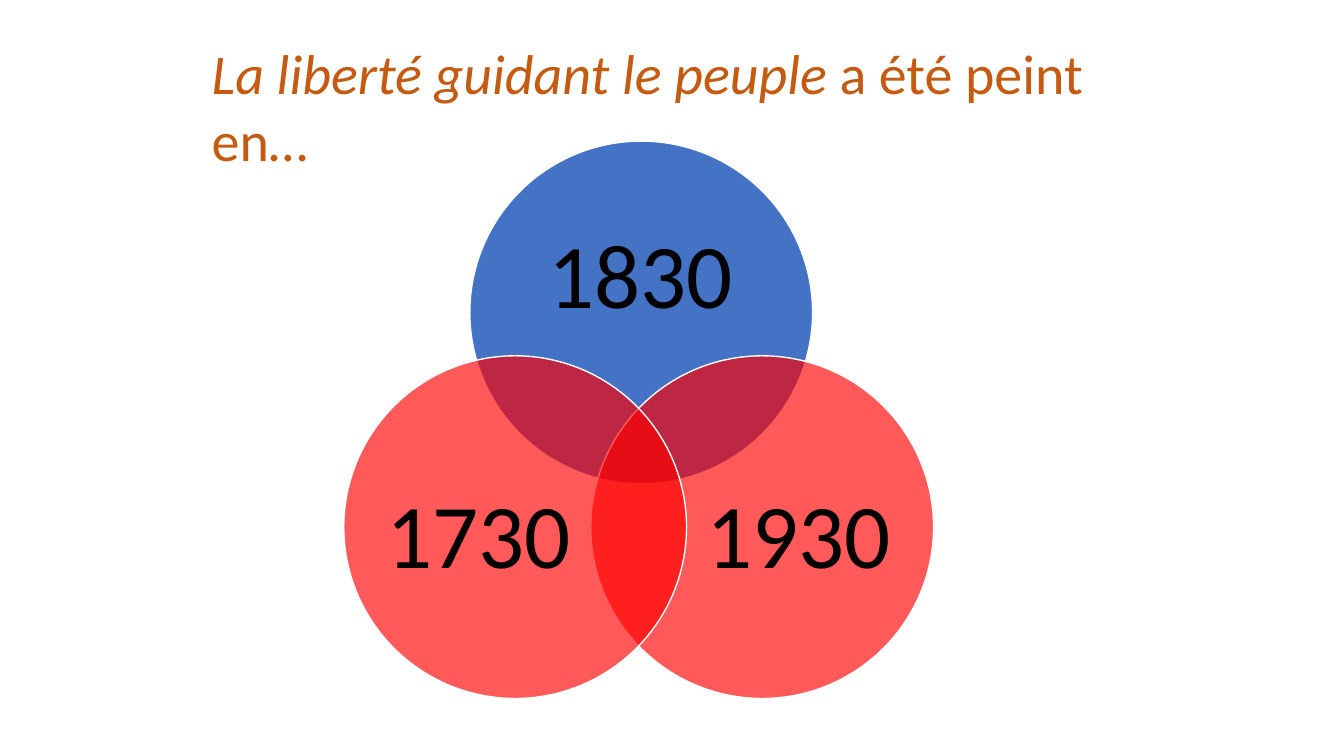
from dataclasses import dataclass

from lxml.etree import SubElement
from pptx import Presentation
from pptx.dml.color import RGBColor
from pptx.enum.shapes import MSO_SHAPE
from pptx.enum.text import MSO_ANCHOR, MSO_AUTO_SIZE, PP_ALIGN
from pptx.oxml.ns import qn
from pptx.util import Emu, Pt

EMU_PER_PX = 9144
CIRCLE_SIZE = 340


@dataclass(frozen=True)
class Theme:
    font: str = "Calibri"
    question: RGBColor = RGBColor(0xC5, 0x5A, 0x11)
    year: RGBColor = RGBColor(0x00, 0x00, 0x00)
    right_answer: RGBColor = RGBColor(0x44, 0x72, 0xC4)
    wrong_answer: RGBColor = RGBColor(0xFF, 0x00, 0x00)
    outline: RGBColor = RGBColor(0xFF, 0xFF, 0xFF)
    question_size: Pt = Pt(40)
    year_size: Pt = Pt(65)
    outline_width: Pt = Pt(1)


THEME = Theme()

ANSWERS = [
    ("1830", (466, 140), (511, 200, 249, 153), THEME.right_answer, 100),
    ("1930", (586, 353), (690, 441, 204, 187), THEME.wrong_answer, 65),
    ("1730", (341, 353), (373, 441, 204, 187), THEME.wrong_answer, 65),
]


def px(*lengths):
    return [Emu(length * EMU_PER_PX) for length in lengths]


def apply_format(target, values):
    for attribute, value in values.items():
        setattr(target, attribute, value)


def add_run(paragraph, text, size, color, italic=False):
    run = paragraph.add_run()
    run.text = text
    apply_format(run.font, {"name": THEME.font, "size": size, "italic": italic})
    run.font.color.rgb = color


def write_question(slide):
    question = slide.shapes.title
    left, top, width, height = px(200, 33, 933, 145)
    apply_format(question, {"left": left, "top": top, "width": width, "height": height})
    apply_format(question.text_frame, {
        "word_wrap": True,
        "auto_size": MSO_AUTO_SIZE.NONE,
        "vertical_anchor": MSO_ANCHOR.TOP,
    })
    paragraph = question.text_frame.paragraphs[0]
    paragraph.alignment = PP_ALIGN.LEFT
    for text, italic in (("La liberté guidant le peuple ", True), ("a été peint en…", False)):
        add_run(paragraph, text, THEME.question_size, THEME.question, italic)


def add_circle(slide, corner, color, opacity):
    circle = slide.shapes.add_shape(MSO_SHAPE.OVAL, *px(*corner, CIRCLE_SIZE, CIRCLE_SIZE))
    circle.shadow.inherit = False
    circle.fill.solid()
    circle.fill.fore_color.rgb = color
    circle.line.color.rgb = THEME.outline
    circle.line.width = THEME.outline_width
    if opacity < 100:
        fill_color = circle.fill._xPr.find(qn("a:solidFill"))[0]
        SubElement(fill_color, qn("a:alpha")).set("val", str(opacity * 1000))


def add_year(slide, year, box):
    label = slide.shapes.add_textbox(*px(*box)).text_frame
    apply_format(label, {
        "word_wrap": True,
        "vertical_anchor": MSO_ANCHOR.MIDDLE,
        "margin_left": 0,
        "margin_top": 0,
        "margin_right": 0,
        "margin_bottom": 0,
    })
    paragraph = label.paragraphs[0]
    apply_format(paragraph, {"alignment": PP_ALIGN.CENTER, "line_spacing": 0.9})
    add_run(paragraph, year, THEME.year_size, THEME.year)


def main():
    presentation = Presentation()
    presentation.slide_width, presentation.slide_height = px(1333, 750)
    slide = presentation.slides.add_slide(presentation.slide_layouts[5])
    write_question(slide)
    for year, corner, box, color, opacity in ANSWERS:
        add_circle(slide, corner, color, opacity)
        add_year(slide, year, box)
    presentation.save("out.pptx")


if __name__ == "__main__":
    main()
